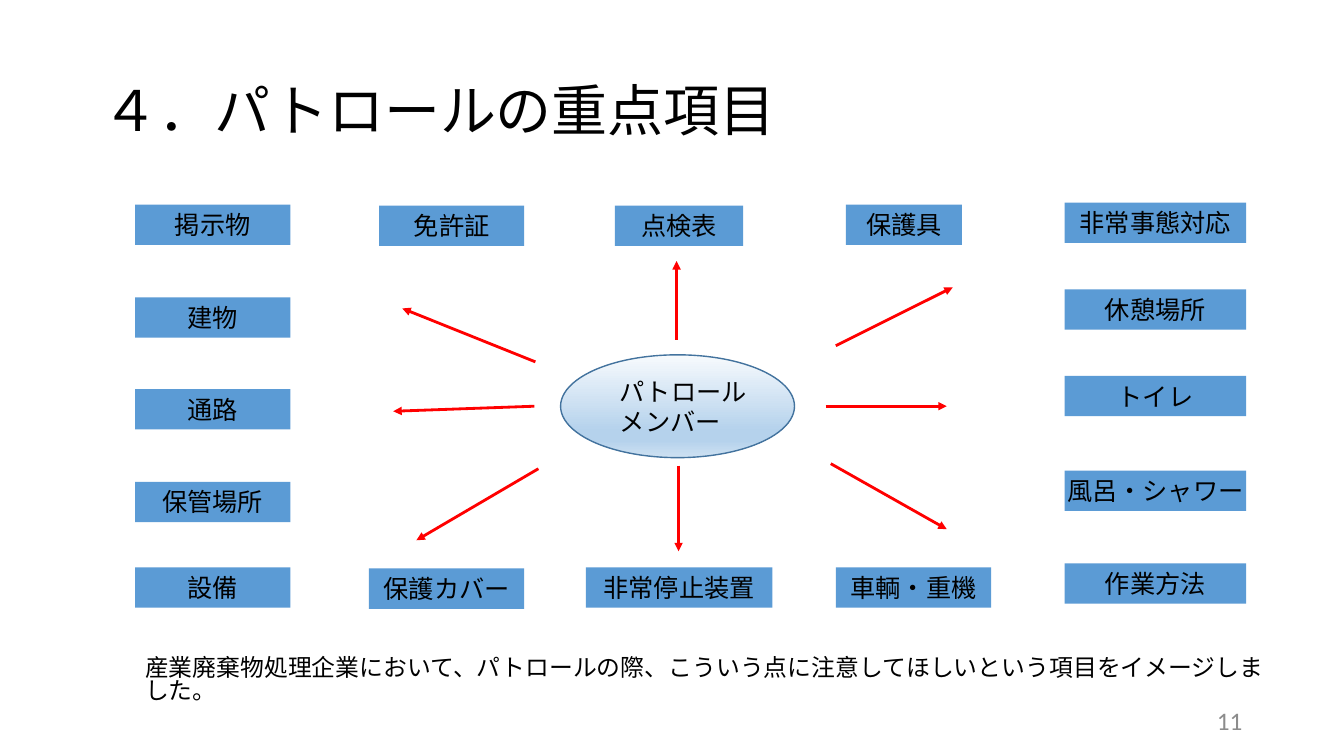
from lxml import etree
from pptx import Presentation
from pptx.dml.color import RGBColor
from pptx.enum.shapes import MSO_CONNECTOR, MSO_SHAPE
from pptx.enum.text import MSO_ANCHOR, PP_ALIGN
from pptx.oxml.ns import qn
from pptx.util import Inches, Pt

RECTANGLE, ELLIPSE = MSO_SHAPE.RECTANGLE, MSO_SHAPE.OVAL
STRAIGHT = MSO_CONNECTOR.STRAIGHT
TOP, MIDDLE = MSO_ANCHOR.TOP, MSO_ANCHOR.MIDDLE
LEFT, CENTER, RIGHT = PP_ALIGN.LEFT, PP_ALIGN.CENTER, PP_ALIGN.RIGHT

COLORS = {
    "text": "000000",
    "number": "8C8C8C",
    "label": "5B9BD5",
    "arrow": "FF0000",
    "outline": "43739E",
}
HUB_STOPS = [(0, "F7FAFD"), (74, "B5D2EC"), (83, "B5D2EC"), (100, "CEE1F2")]
LABEL_HEIGHT = 0.4

LEFT_COLUMN = [("掲示物", 2.03), ("建物", 2.95), ("通路", 3.86), ("保管場所", 4.78), ("設備", 5.63)]
RIGHT_COLUMN = [
    ("非常事態対応", 2.01),
    ("休憩場所", 2.87),
    ("トイレ", 3.73),
    ("風呂・シャワー", 4.67),
    ("作業方法", 5.59),
]
MIDDLE_LABELS = [
    ("免許証", 3.76, 2.04, 1.44),
    ("点検表", 6.1, 2.04, 1.27),
    ("保護具", 8.39, 2.03, 1.15),
    ("保護カバー", 3.66, 5.64, 1.54),
    ("非常停止装置", 5.81, 5.63, 1.85),
    ("車輌・重機", 8.29, 5.63, 1.54),
]
ARROWS = [
    (8.29, 3.43, 9.45, 2.85),
    (8.19, 4.03, 9.39, 4.03),
    (5.3, 4.03, 3.9, 4.08),
    (5.31, 3.59, 3.99, 3.06),
    (6.71, 3.37, 6.71, 2.59),
    (5.34, 4.65, 4.13, 5.36),
    (8.24, 4.6, 9.39, 5.25),
    (6.73, 4.62, 6.73, 5.47),
]


class PatrolSlide:
    """Holds the text style and the slide, and adds each kind of element."""

    def __init__(self, slide, font="Calibri", size=18):
        self.slide = slide
        self.font = font
        self.size = size

    def set_text(self, shape, lines, size=None, color="text", anchor=TOP, wrap=True, **formats):
        frame = shape.text_frame
        frame.word_wrap = wrap
        frame.vertical_anchor = anchor
        frame.text = "\n".join(lines)
        for paragraph in frame.paragraphs:
            for name, value in formats.items():
                setattr(paragraph, name, value)
            for run in paragraph.runs:
                run.font.name = self.font
                run.font.size = Pt(size or self.size)
                run.font.color.rgb = RGBColor.from_string(COLORS[color])

    def text(self, lines, left, top, width, height, **style):
        box = self.slide.shapes.add_textbox(*map(Inches, (left, top, width, height)))
        self.set_text(box, lines, **style)

    def label(self, text, left, top, width):
        shape = self.slide.shapes.add_shape(
            RECTANGLE, *map(Inches, (left, top, width, LABEL_HEIGHT)))
        shape.shadow.inherit = False
        shape.fill.solid()
        shape.fill.fore_color.rgb = RGBColor.from_string(COLORS["label"])
        shape.line.fill.background()
        self.set_text(shape, [text], wrap=False, alignment=CENTER)

    def hub(self, left, top, width, height):
        shape = self.slide.shapes.add_shape(ELLIPSE, *map(Inches, (left, top, width, height)))
        shape.shadow.inherit = False
        shape.line.color.rgb = RGBColor.from_string(COLORS["outline"])
        shape.line.width = Pt(1)
        shape.fill.gradient()
        shape.fill.gradient_angle = 270
        stops = shape._element.spPr.find(".//" + qn("a:gsLst"))
        for stop in list(stops):
            stops.remove(stop)
        for position, color in HUB_STOPS:
            stop = etree.SubElement(stops, qn("a:gs"), pos=str(position * 1000))
            etree.SubElement(stop, qn("a:srgbClr"), val=color)

    def arrow(self, *ends):
        connector = self.slide.shapes.add_connector(STRAIGHT, *map(Inches, ends))
        connector.line.color.rgb = RGBColor.from_string(COLORS["arrow"])
        connector.line.width = Pt(2)
        outline = connector._element.spPr.find(qn("a:ln"))
        etree.SubElement(outline, qn("a:tailEnd"), type="triangle")
        etree.SubElement(connector._element.spPr, qn("a:effectLst"))


def main():
    presentation = Presentation()
    presentation.slide_width = Inches(13.33)
    presentation.slide_height = Inches(7.5)
    patrol = PatrolSlide(presentation.slides.add_slide(presentation.slide_layouts[6]))

    patrol.text(["４．パトロールの重点項目"], 0.92, 0.4, 11.5, 1.45,
                size=40, anchor=MIDDLE, line_spacing=0.9)
    patrol.text(["産業廃棄物処理企業において、パトロールの際、こういう点に注意してほしいという項目をイメージしました。"],
                1.34, 6.48, 11.5, 0.5, size=17, line_spacing=0.8, space_before=Pt(10))

    for text, top in LEFT_COLUMN:
        patrol.label(text, 1.34, top, 1.54)
    for text, top in RIGHT_COLUMN:
        patrol.label(text, 10.56, top, 1.8)
    for label in MIDDLE_LABELS:
        patrol.label(*label)

    patrol.hub(5.56, 3.52, 2.32, 1.02)
    patrol.text(["パトロール", "メンバー"], 6.05, 3.68, 1.56, 0.71, alignment=LEFT)
    for ends in ARROWS:
        patrol.arrow(*ends)

    patrol.text(["11"], 9.42, 6.95, 3, 0.4, color="number", anchor=MIDDLE, alignment=RIGHT)
    presentation.save("out.pptx")


if __name__ == "__main__":
    main()
